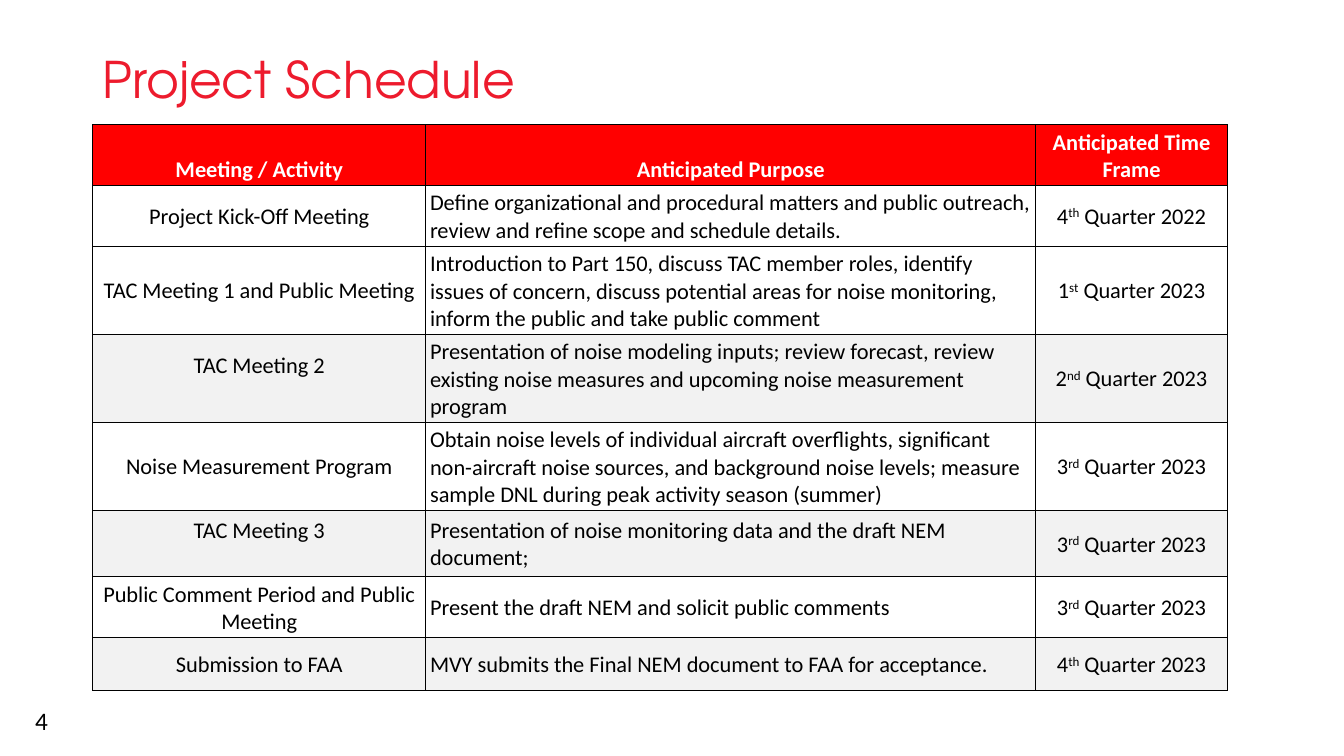
from lxml.etree import SubElement
from pptx import Presentation
from pptx.dml.color import RGBColor
from pptx.enum.text import MSO_ANCHOR as Anchor, PP_ALIGN as Align
from pptx.oxml.ns import qn
from pptx.util import Pt

RED_TITLE = RGBColor(0xED, 0x1B, 0x2D)
RED_HEADER = RGBColor(0xFF, 0x00, 0x00)
WHITE = RGBColor(0xFF, 0xFF, 0xFF)
GREY = RGBColor(0xF2, 0xF2, 0xF2)
BLACK = RGBColor(0x00, 0x00, 0x00)

TITLE = "Project Schedule"
PAGE_NUMBER = "4"
HEADERS = ("Meeting / Activity", "Anticipated Purpose", "Anticipated Time Frame")
SCHEDULE = [
    ("Project Kick-Off Meeting",
     "Define organizational and procedural matters and public outreach, "
     "review and refine scope and schedule details.",
     ("4", "th", " Quarter 2022"), WHITE),
    ("TAC Meeting 1 and Public Meeting",
     "Introduction to Part 150, discuss TAC member roles, identify issues of concern, "
     "discuss potential areas for noise monitoring, inform the public and take public comment",
     ("1", "st", " Quarter 2023"), WHITE),
    ("TAC Meeting 2",
     "Presentation of noise modeling inputs; review forecast, review existing noise "
     "measures and upcoming noise measurement program",
     ("2", "nd", " Quarter 2023"), GREY),
    ("Noise Measurement Program",
     "Obtain noise levels of individual aircraft overflights, significant non-aircraft "
     "noise sources, and background noise levels; measure sample DNL during peak "
     "activity season (summer)",
     ("3", "rd", " Quarter 2023"), WHITE),
    ("TAC Meeting 3",
     "Presentation of noise monitoring data and the draft NEM document;",
     ("3", "rd", " Quarter 2023"), GREY),
    ("Public Comment Period and Public Meeting",
     "Present the draft NEM and solicit public comments",
     ("3", "rd", " Quarter 2023"), WHITE),
    ("Submission to FAA",
     "MVY submits the Final NEM document to FAA for acceptance.",
     ("4", "th", " Quarter 2023"), GREY),
]
RAISED = {"TAC Meeting 2", "TAC Meeting 3"}
LINE_HEIGHT = 19.5
COLUMN_WIDTHS = (238, 435.6, 137)
ROW_HEIGHTS = (43.4, 43.4, 62.9, 62.9, 62.9, 47.5, 43.4, 38)

TITLE_FONT = {"name": "TeX Gyre Adventor", "size": Pt(36)}
NUMBER_FONT = {"name": "Calibri", "size": Pt(18)}
HEADER_FONT = {"name": "Calibri", "size": Pt(16), "bold": True}
BODY_FONT = {"name": "Calibri", "size": Pt(16), "bold": False}
CELL_FORMAT = {"margin_left": Pt(3), "margin_right": Pt(3),
               "margin_top": Pt(3), "margin_bottom": Pt(1.4)}


def apply(target, values):
    for name, value in values.items():
        setattr(target, name, value)


def add_span(para, text, style, color):
    span = para.add_run()
    span.text = text
    apply(span.font, style)
    span.font.color.rgb = color
    return span


def add_text(page, frame, text, style, color, anchor):
    box = page.shapes.add_textbox(*(Pt(length) for length in frame))
    box.text_frame.word_wrap = True
    box.text_frame.vertical_anchor = anchor
    para = box.text_frame.paragraphs[0]
    add_span(para, text, style, color)
    return para


def add_borders(cell):
    properties = cell._tc.get_or_add_tcPr()
    for side in ("a:lnL", "a:lnR", "a:lnT", "a:lnB"):
        line = SubElement(properties, qn(side), w=str(Pt(1)))
        SubElement(SubElement(line, qn("a:solidFill")), qn("a:srgbClr"), val=str(BLACK))


def fill_cell(cell, parts, style, color, background, align, anchor):
    add_borders(cell)
    apply(cell, {**CELL_FORMAT, "vertical_anchor": anchor})
    cell.fill.solid()
    cell.fill.fore_color.rgb = background
    para = cell.text_frame.paragraphs[0]
    para.alignment = align
    for index, part in enumerate(parts):
        span = add_span(para, part, style, color)
        if index == 1:
            span.font._element.set("baseline", "30000")


def add_schedule(page):
    table = page.shapes.add_table(
        len(ROW_HEIGHTS), len(COLUMN_WIDTHS), Pt(66.2), Pt(89),
        Pt(sum(COLUMN_WIDTHS)), Pt(sum(ROW_HEIGHTS))).table
    apply(table, {"first_row": False, "horz_banding": False})
    for column, width in zip(table.columns, COLUMN_WIDTHS):
        column.width = Pt(width)
    for row, height in zip(table.rows, ROW_HEIGHTS):
        row.height = Pt(height)

    for index, header in enumerate(HEADERS):
        fill_cell(table.cell(0, index), [header], HEADER_FONT, WHITE,
                  RED_HEADER, Align.CENTER, Anchor.BOTTOM)
    for number, (activity, purpose, quarter, background) in enumerate(SCHEDULE, 1):
        columns = (([activity], Align.CENTER), ([purpose], Align.LEFT), (quarter, Align.CENTER))
        for index, (parts, align) in enumerate(columns):
            fill_cell(table.cell(number, index), parts, BODY_FONT, BLACK,
                      background, align, Anchor.MIDDLE)
        if activity in RAISED:
            table.cell(number, 0).margin_bottom += Pt(LINE_HEIGHT)


def main():
    deck = Presentation()
    apply(deck, {"slide_width": Pt(960), "slide_height": Pt(540)})
    page = deck.slides.add_slide(deck.slide_layouts[6])
    title = add_text(page, (66.2, 28.8, 828, 60.5), TITLE, TITLE_FONT, RED_TITLE, Anchor.MIDDLE)
    title.line_spacing = 0.9
    add_text(page, (18, 500.4, 37.4, 29), PAGE_NUMBER, NUMBER_FONT, BLACK, Anchor.TOP)
    add_schedule(page)
    deck.save("out.pptx")


if __name__ == "__main__":
    main()
